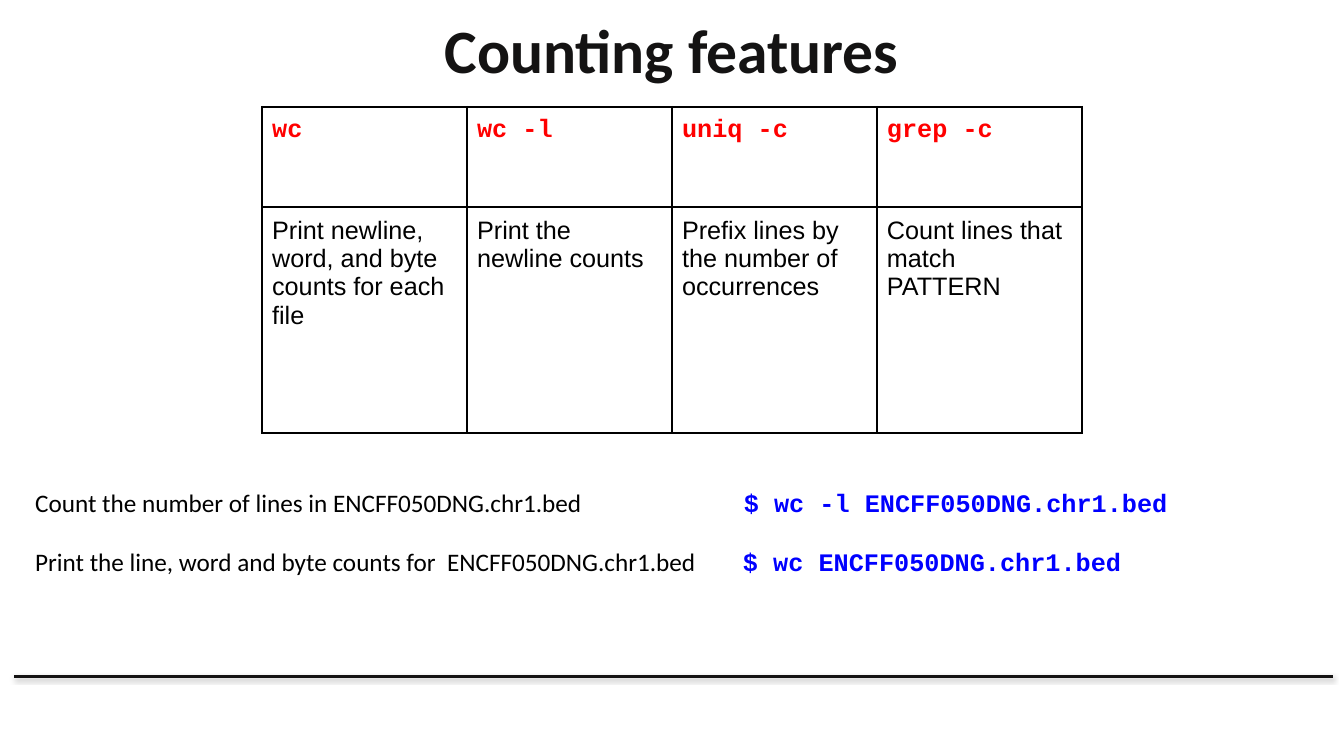
from lxml import etree
from pptx import Presentation
from pptx import util as u
from pptx.dml.color import RGBColor
from pptx.enum import shapes, text
from pptx.oxml import parse_xml
from pptx.oxml.ns import nsdecls, qn

W, H = u.Inches(13.33), u.Inches(7.5)
COLORS = {"ink": "141313", "black": "000000", "command": "FF0000", "example": "0000FF"}
COMMANDS = [
    ("wc", "Print newline, word, and byte counts for each file"),
    ("wc -l", "Print the newline counts"),
    ("uniq -c", "Prefix lines by the number of occurrences"),
    ("grep -c", "Count lines that match PATTERN"),
]
EXAMPLES = [
    ("Count the number of lines in ENCFF050DNG.chr1.bed", 51.24,
     "$ wc -l ENCFF050DNG.chr1.bed", 54.61),
    ("Print the line, word and byte counts for  ENCFF050DNG.chr1.bed", 55.36,
     "$ wc ENCFF050DNG.chr1.bed", 54.54),
]


def px(share):
    """Turn a percentage of the slide width into a length."""
    return round(W * share / 100)


def py(share):
    """Turn a percentage of the slide height into a length."""
    return round(H * share / 100)


def write(tf, words, size=18, font="Calibri", color="black", bold=False,
          align=text.PP_ALIGN.LEFT):
    """Put one formatted run into a text frame."""
    tf.word_wrap = True
    p = tf.paragraphs[0]
    p.alignment = align
    r = p.add_run()
    r.text = words
    r.font.size, r.font.name, r.font.bold = u.Pt(size), font, bold
    r.font.color.rgb = RGBColor.from_string(COLORS[color])


def add_text(s, words, x, y, w, h, inset=0.1, anchor=text.MSO_ANCHOR.TOP, **fmt):
    """Add a text box placed in percentages of the slide."""
    tf = s.shapes.add_textbox(px(x), py(y), px(w), py(h)).text_frame
    tf.margin_left = tf.margin_right = u.Inches(0.1)
    tf.margin_top = tf.margin_bottom = u.Inches(inset)
    tf.vertical_anchor = anchor
    write(tf, words, **fmt)


def add_rule(s, x1, x2, y):
    """Add the footer rule with its soft shadow."""
    line = s.shapes.add_connector(shapes.MSO_CONNECTOR.STRAIGHT, px(x1), py(y), px(x2), py(y))
    line.line.width = u.Pt(2)
    line.line.color.rgb = RGBColor.from_string(COLORS["ink"])
    line._element.spPr.append(parse_xml(
        f'<a:effectLst {nsdecls("a")}><a:outerShdw blurRad="{u.Pt(3.1)}" dist="{u.Pt(1.6)}" '
        f'dir="5400000" rotWithShape="0"><a:srgbClr val="{COLORS["black"]}">'
        '<a:alpha val="38000"/></a:srgbClr></a:outerShdw></a:effectLst>'))


def add_borders(cell):
    """Draw all four borders of a table cell."""
    tcPr = cell._tc.get_or_add_tcPr()
    for side in ("a:lnL", "a:lnR", "a:lnT", "a:lnB"):
        ln = etree.SubElement(tcPr, qn(side), w=str(u.Pt(1.5)))
        fill = etree.SubElement(ln, qn("a:solidFill"))
        etree.SubElement(fill, qn("a:srgbClr"), val=COLORS["black"])


def add_commands(s, x, y, col, rows):
    """Add the table of commands over their descriptions."""
    n = len(COMMANDS)
    table = s.shapes.add_table(len(rows), n, px(x), py(y), px(col * n), py(sum(rows))).table
    table.first_row = table.horz_banding = False
    for row, height in zip(table.rows, rows):
        row.height = py(height)
    formats = [dict(font="Courier New", color="command", bold=True), dict(font="Arial")]
    for i, command in enumerate(COMMANDS):
        table.columns[i].width = px(col)
        for j, (words, fmt) in enumerate(zip(command, formats)):
            cell = table.cell(j, i)
            cell.margin_left = cell.margin_right = u.Inches(0.1)
            cell.margin_top = cell.margin_bottom = u.Inches(0.1)
            add_borders(cell)
            cell.fill.background()
            write(cell.text_frame, words, **fmt)


def main():
    """Build the slide and save it."""
    prs = Presentation()
    prs.slide_width, prs.slide_height = W, H
    s = prs.slides.add_slide(prs.slide_layouts[6])
    add_rule(s, 1.05, 99.18, 89.47)
    add_text(s, "Counting features", 5, 0.13, 90, 12.8, inset=0.05,
             anchor=text.MSO_ANCHOR.MIDDLE, size=44, color="ink", bold=True,
             align=text.PP_ALIGN.CENTER)
    add_commands(s, 19.5, 14.13, 15.25, [13.2, 30])
    for i, (task, width, command, x) in enumerate(EXAMPLES):
        y = 63.07 + 7.87 * i
        add_text(s, command, x, y, 100 - x, 7.6, font="Courier New", color="example", bold=True)
        add_text(s, task, 1.88, y, width, 7.6)
    prs.save("out.pptx")


if __name__ == "__main__":
    main()
